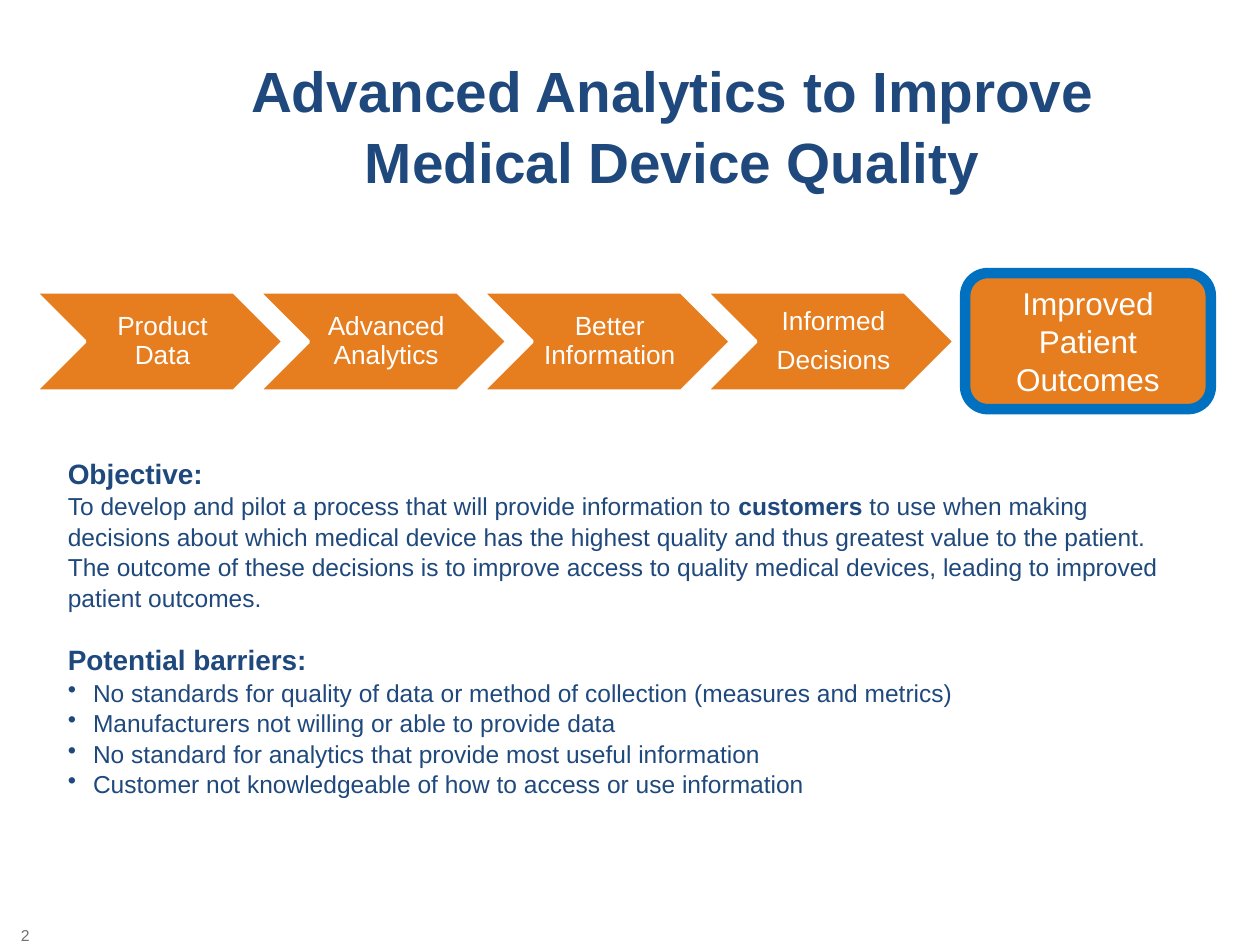
from lxml import etree
from pptx import Presentation, util as u
from pptx.dml.color import RGBColor
from pptx.enum import shapes, text
from pptx.oxml.ns import qn

WIDTH, HEIGHT = 10, 7.5
COLORS = {"navy": "1F497D", "orange": "E67D1E", "blue": "0070C0",
          "white": "FFFFFF", "gray": "717171"}
STEPS = ["Product Data", "Advanced Analytics", "Better Information",
         "Informed\nDecisions"]
STEP_LEFT, STEP_PITCH = 0.028, 0.1775
OBJECTIVE = [
    ("To develop and pilot a process that will provide information to ", False),
    ("customers", True),
    (" to use when making decisions about which medical device has the highest "
     "quality and thus greatest value to the patient. The outcome of these "
     "decisions is to improve access to quality medical devices, leading to "
     "improved patient outcomes.", False),
]
BARRIERS = [
    "No standards for quality of data or method of collection (measures and metrics)",
    "Manufacturers not willing or able to provide data",
    "No standard for analytics that provide most useful information",
    "Customer not knowledgeable of how to access or use information",
]


def place(left, top, width, height):
    """Turn shares of the slide's size into lengths."""
    return (u.Inches(left * WIDTH), u.Inches(top * HEIGHT),
            u.Inches(width * WIDTH), u.Inches(height * HEIGHT))


def style(font, size, color, bold=False):
    """Set typeface, size, colour and weight of a font."""
    font.name, font.size, font.bold = "Arial", u.Pt(size), bold
    font.color.rgb = RGBColor.from_string(COLORS[color])


def set_margins(frame, left, others):
    """Set the inner margins of a text frame in inches."""
    frame.margin_left = u.Inches(left)
    frame.margin_top = frame.margin_right = frame.margin_bottom = u.Inches(others)


def write_centered(frame, words, size, color, bold=False, spacing=1.0, after=0,
                   anchor=text.MSO_ANCHOR.MIDDLE):
    """Fill a frame with centred paragraphs."""
    frame.word_wrap = True
    frame.vertical_anchor = anchor
    frame.text = words
    for para in frame.paragraphs:
        para.alignment = text.PP_ALIGN.CENTER
        para.line_spacing = spacing
        para.space_after = u.Pt(after)
        for span in para.runs:
            style(span.font, size, color, bold)


def add_block(page, kind, area, line, line_width):
    """Add an orange shape with an outline."""
    block = page.shapes.add_shape(kind, *place(*area))
    block.shadow.inherit = False
    block.fill.solid()
    block.fill.fore_color.rgb = RGBColor.from_string(COLORS["orange"])
    block.line.color.rgb = RGBColor.from_string(COLORS[line])
    block.line.width = u.Pt(line_width)
    return block


def add_process(page):
    """Add the row of steps and the outcome at its end."""
    for column, words in enumerate(STEPS):
        area = (STEP_LEFT + column * STEP_PITCH, 0.309, 0.197, 0.105)
        step = add_block(page, shapes.MSO_SHAPE.CHEVRON, area, "white", 2)
        set_margins(step.text_frame, 0.07, 0.02)
        write_centered(step.text_frame, words, 15, "white", spacing=0.9, after=6)
    outcome = add_block(page, shapes.MSO_SHAPE.ROUNDED_RECTANGLE,
                        (0.766, 0.289, 0.195, 0.144), "blue", 6)
    write_centered(outcome.text_frame, "Improved Patient Outcomes", 18, "white")


def add_bullet(para):
    """Give a paragraph a hanging bullet."""
    properties = para._p.get_or_add_pPr()
    properties.set("marL", str(u.Inches(0.2)))
    properties.set("indent", str(-u.Inches(0.2)))
    etree.SubElement(properties, qn("a:buChar")).set("char", "•")


def add_body(page):
    """Add the objective and the list of barriers."""
    frame = page.shapes.add_textbox(*place(0.044, 0.475, 0.9, 0.36)).text_frame
    frame.word_wrap = True
    rows = [([("Objective:", True)], 16), (OBJECTIVE, 14),
            ([("Potential barriers:", True)], 16)]
    rows += [([(barrier, False)], 14) for barrier in BARRIERS]
    for index, (spans, size) in enumerate(rows):
        para = frame.add_paragraph() if index else frame.paragraphs[0]
        para.line_spacing = 1.04
        if spans is OBJECTIVE:
            para.space_after = u.Pt(16.8)
        if index > 2:
            add_bullet(para)
        for words, bold in spans:
            span = para.add_run()
            span.text = words
            style(span.font, size, "navy", bold)


def main():
    """Build and save the deck."""
    deck = Presentation()
    deck.slide_width, deck.slide_height = u.Inches(WIDTH), u.Inches(HEIGHT)
    page = deck.slides.add_slide(deck.slide_layouts[6])
    number = page.shapes.add_textbox(*place(0, 0.98, 0.04, 0.02)).text_frame
    set_margins(number, 0, 0)
    write_centered(number, "2", 9, "gray", anchor=text.MSO_ANCHOR.BOTTOM)
    title = page.shapes.add_textbox(*place(0.117, 0.063, 0.833, 0.137)).text_frame
    write_centered(title, "Advanced Analytics to Improve Medical Device Quality",
                   32.4, "navy", bold=True, spacing=1.04)
    add_body(page)
    add_process(page)
    deck.save("out.pptx")


if __name__ == "__main__":
    main()
